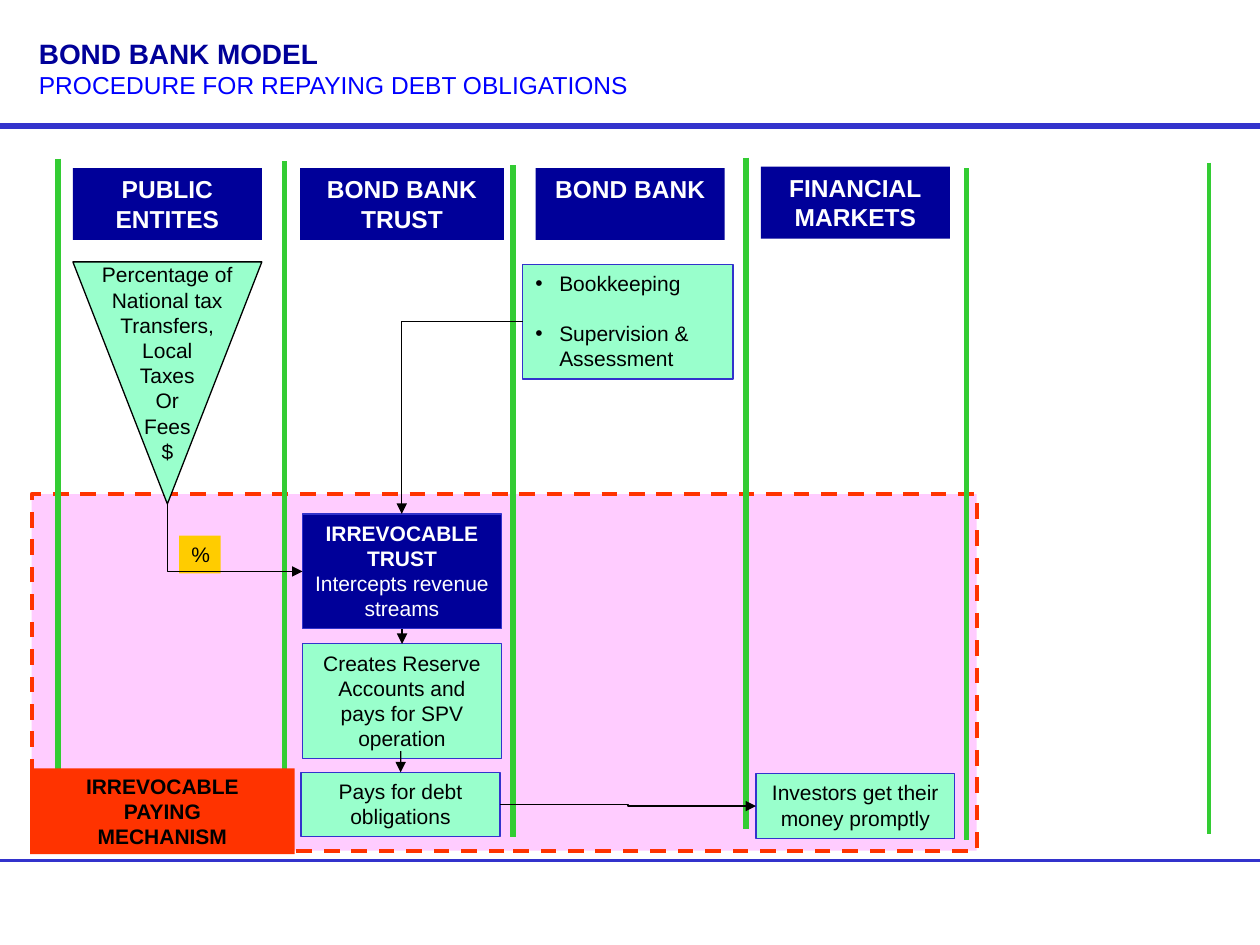
from lxml.etree import SubElement
from pptx import Presentation
from pptx.dml.color import RGBColor
from pptx.enum.dml import MSO_LINE
from pptx.enum.shapes import MSO_CONNECTOR, MSO_SHAPE
from pptx.enum.text import MSO_ANCHOR, MSO_AUTO_SIZE, PP_ALIGN
from pptx.oxml.ns import qn
from pptx.util import Cm, Pt

NAVY = RGBColor(0x00, 0x00, 0x99)
BLUE = RGBColor(0x00, 0x00, 0xFF)
INDIGO = RGBColor(0x33, 0x33, 0xCC)
GREEN = RGBColor(0x33, 0xCC, 0x33)
MINT = RGBColor(0x99, 0xFF, 0xCC)
PINK = RGBColor(0xFF, 0xCC, 0xFF)
RED = RGBColor(0xFF, 0x33, 0x00)
GOLD = RGBColor(0xFF, 0xCC, 0x00)
BLACK = RGBColor(0x00, 0x00, 0x00)
WHITE = RGBColor(0xFF, 0xFF, 0xFF)

SLIDE_W, SLIDE_H = 25.4, 19.05
TITLE = [("BOND BANK MODEL", 16, True, NAVY),
         ("PROCEDURE FOR REPAYING DEBT OBLIGATIONS", 14, False, BLUE)]
RULES = [(2.54, 3), (17.35, 1.5)]
HEADERS = [((1.47, 3.39, 3.81, 1.45), ["PUBLIC ENTITES"]),
           ((6.05, 3.39, 4.11, 1.45), ["BOND BANK TRUST"]),
           ((10.8, 3.39, 3.81, 1.45), ["BOND BANK"]),
           ((15.34, 3.36, 3.81, 1.45), ["FINANCIAL", "MARKETS"])]
LANES = [(1.17, 3.2, 3), (5.74, 3.25, 3), (10.34, 3.33, 3),
         (15.04, 3.18, 3), (19.48, 3.39, 3), (24.38, 3.28, 2.25)]
LANE_LENGTH = 13.54
ZONE = (0.64, 9.96, 19.05, 7.19)
REVENUES = ["Percentage of", "National tax", "Transfers,", "Local",
            "Taxes", "Or", "Fees", "$"]
BANK_DUTIES = ["Bookkeeping", "Supervision & Assessment"]


def style_run(paragraph, text, size, bold, color):
    run = paragraph.add_run()
    run.text = text
    run.font.name = "Arial"
    run.font.size = Pt(size)
    run.font.bold = bold
    run.font.color.rgb = color


def paragraphs(frame, count):
    return [frame.paragraphs[0]] + [frame.add_paragraph() for _ in range(count - 1)]


def place(shape, box):
    shape.left, shape.top, shape.width, shape.height = map(Cm, box)


def paint(shape, fill, outline=None, width=0.75):
    shape.fill.solid()
    shape.fill.fore_color.rgb = fill
    if outline is None:
        shape.line.fill.background()
    else:
        shape.line.color.rgb = outline
        shape.line.width = Pt(width)


def add_box(slide, box, lines, fill, outline=None, color=BLACK, size=12, bold=(),
            kind=MSO_SHAPE.RECTANGLE, anchor=MSO_ANCHOR.TOP, wrap=True,
            align=PP_ALIGN.CENTER, width=0.75):
    shape = slide.shapes.add_shape(kind, *map(Cm, box))
    shape.shadow.inherit = False
    paint(shape, fill, outline, width)
    frame = shape.text_frame
    frame.word_wrap = wrap
    frame.vertical_anchor = anchor
    if lines:
        for paragraph, line in zip(paragraphs(frame, len(lines)), lines):
            paragraph.alignment = align
            style_run(paragraph, line, size, line in bold, color)
    return shape


def add_line(slide, start, end, color=BLACK, width=0.75, arrow=False,
             kind=MSO_CONNECTOR.STRAIGHT, corner=False, rotation=0):
    line = slide.shapes.add_connector(kind, *map(Cm, start + end))
    line.line.color.rgb = color
    line.line.width = Pt(width)
    properties = line._element.spPr
    if arrow:
        SubElement(properties.find(qn("a:ln")), qn("a:tailEnd"), type="triangle")
    if corner:
        properties.find(qn("a:prstGeom")).set("prst", "bentConnector2")
    if rotation:
        properties.find(qn("a:xfrm")).set("rot", str(rotation * 60000))
    SubElement(properties, qn("a:effectLst"))
    return line


def add_heading(slide):
    title = slide.shapes.title
    place(title, (0.53, 0.43, 24.33, 1.88))
    frame = title.text_frame
    frame.auto_size = MSO_AUTO_SIZE.NONE
    frame.vertical_anchor = MSO_ANCHOR.MIDDLE
    for paragraph, line in zip(paragraphs(frame, len(TITLE)), TITLE):
        paragraph.alignment = PP_ALIGN.LEFT
        style_run(paragraph, *line)
    for y, width in RULES:
        add_line(slide, (0, y), (SLIDE_W, y), INDIGO, width)


def add_duties(slide):
    duties = slide.placeholders[1]
    place(duties, (10.54, 5.33, 4.24, 2.31))
    paint(duties, MINT, INDIGO)
    frame = duties.text_frame
    frame.auto_size = MSO_AUTO_SIZE.NONE
    for index, paragraph in enumerate(paragraphs(frame, len(BANK_DUTIES))):
        properties = paragraph._p.get_or_add_pPr()
        properties.set("marL", str(Cm(0.48)))
        properties.set("indent", str(-Cm(0.48)))
        SubElement(properties, qn("a:buChar"), char="•")
        paragraph.space_before = Pt(14 if index else 0)
        style_run(paragraph, BANK_DUTIES[index], 12, False, BLACK)


def add_lanes(slide):
    zone = add_box(slide, ZONE, [], PINK, RED, width=2.25)
    zone.line.dash_style = MSO_LINE.DASH
    for box, lines in HEADERS:
        add_box(slide, box, lines, NAVY, color=WHITE, size=14, bold=lines)
    for x, top, width in LANES:
        add_line(slide, (x, top), (x, top + LANE_LENGTH), GREEN, width)


def add_flow(slide):
    funnel = add_box(slide, (1.47, 5.28, 3.81, 4.88), REVENUES, MINT, BLACK,
                     kind=MSO_SHAPE.FLOWCHART_MERGE, wrap=False)
    funnel.text_frame.margin_top = funnel.text_frame.margin_bottom = 0
    add_box(slide, (3.61, 10.8, 0.84, 0.76), ["%"], GOLD, align=PP_ALIGN.LEFT)
    trust = add_box(slide, (6.1, 10.36, 4.01, 2.31),
                    ["IRREVOCABLE TRUST", "Intercepts revenue streams"],
                    NAVY, INDIGO, WHITE, bold=["IRREVOCABLE TRUST"])
    reserve = add_box(slide, (6.1, 12.98, 4.01, 2.31),
                      ["Creates Reserve Accounts and pays for SPV operation"], MINT, INDIGO)
    payment = add_box(slide, (6.07, 15.57, 4.01, 1.3),
                      ["Pays for debt obligations"], MINT, INDIGO)
    add_box(slide, (15.24, 15.6, 4.01, 1.3),
            ["Investors get their money promptly"], MINT, INDIGO)
    mechanism = ["IRREVOCABLE", "PAYING", "MECHANISM"]
    add_box(slide, (0.61, 15.49, 5.33, 1.73), mechanism, RED, bold=mechanism,
            anchor=MSO_ANCHOR.MIDDLE, wrap=False)

    to_reserve = add_line(slide, (8.1, 12.67), (8.1, 12.98), arrow=True)
    to_reserve.begin_connect(trust, 2)
    to_reserve.end_connect(reserve, 0)
    to_payment = add_line(slide, (8.08, 15.14), (8.08, 15.57), arrow=True)
    to_payment.end_connect(payment, 0)
    add_line(slide, (10.08, 16.22), (15.24, 16.25), arrow=True, kind=MSO_CONNECTOR.ELBOW)
    add_line(slide, (10.54, 6.48), (8.1, 10.36), arrow=True,
             kind=MSO_CONNECTOR.ELBOW, corner=True)
    add_line(slide, (5.42, 9.48), (4.06, 12.2), arrow=True,
             kind=MSO_CONNECTOR.ELBOW, corner=True, rotation=270)


def main():
    """Build the bond bank repayment slide."""
    deck = Presentation()
    deck.slide_width, deck.slide_height = Cm(SLIDE_W), Cm(SLIDE_H)
    slide = deck.slides.add_slide(deck.slide_layouts[1])
    add_heading(slide)
    add_lanes(slide)
    add_duties(slide)
    add_flow(slide)
    deck.save("out.pptx")


if __name__ == "__main__":
    main()
